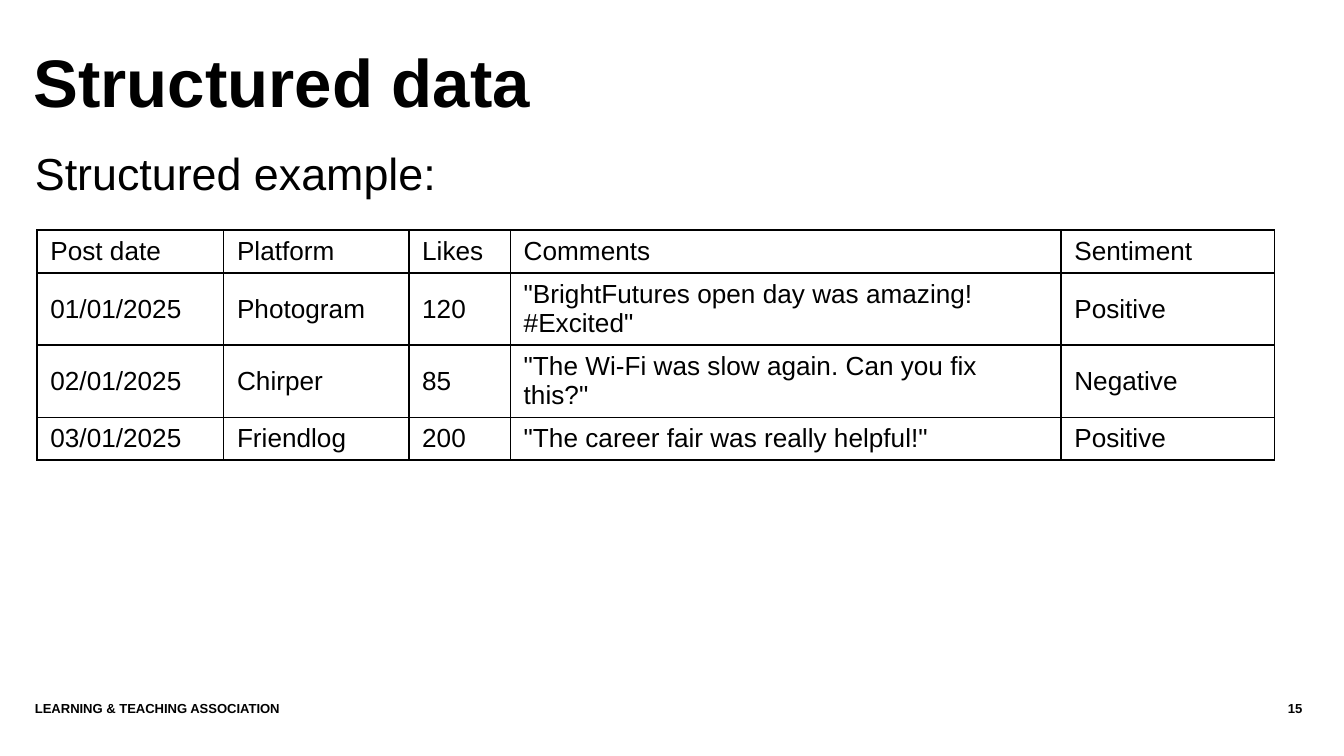
from dataclasses import dataclass

from lxml import etree
from pptx import Presentation
from pptx.dml.color import RGBColor
from pptx.enum import text
from pptx.oxml.ns import qn
from pptx.util import Pt


@dataclass(frozen=True)
class Theme:
    font: str = "Arial"
    ink: str = "000000"
    paper: str = "FFFFFF"
    title_size: float = 36
    body_size: float = 24
    table_size: float = 14
    footer_size: float = 7
    border_width: float = 1


@dataclass(frozen=True)
class Box:
    left: float
    top: float
    width: float
    height: float


@dataclass(frozen=True)
class Label:
    words: str
    box: Box
    size: float
    bold: bool = False
    align: text.PP_ALIGN = text.PP_ALIGN.LEFT
    space_before: float = 0


THEME = Theme()
TITLE_BOX = Box(18, 19.4, 664.6, 54.7)
TABLE_BOX = Box(19.8, 123.2, 663.1, 92)
LABELS = [
    Label("Structured example:", Box(18.7, 77.8, 604.1, 283.7), THEME.body_size,
          space_before=2),
    Label("LEARNING & TEACHING ASSOCIATION", Box(18.7, 375.1, 605.5, 21.6),
          THEME.footer_size, bold=True),
    Label("15", Box(626.4, 375.1, 71.3, 21.6), THEME.footer_size, bold=True,
          align=text.PP_ALIGN.RIGHT),
]
COLUMN_WIDTHS = [100, 99.2, 54.4, 295, 114.5]
POSTS = [
    ("Post date", "Platform", "Likes", "Comments", "Sentiment"),
    ("01/01/2025", "Photogram", "120",
     '"BrightFutures open day was amazing! #Excited"', "Positive"),
    ("02/01/2025", "Chirper", "85",
     '"The Wi-Fi was slow again. Can you fix this?"', "Negative"),
    ("03/01/2025", "Friendlog", "200",
     '"The career fair was really helpful!"', "Positive"),
]


def write_text(frame, words: str, *, size: float, bold: bool = False,
               align: text.PP_ALIGN = text.PP_ALIGN.LEFT,
               line_spacing: float = 1.0, space_before: float = 0) -> None:
    frame.word_wrap = True
    paragraph = frame.paragraphs[0]
    paragraph.alignment = align
    paragraph.line_spacing = line_spacing
    paragraph.space_before = Pt(space_before)
    run = paragraph.add_run()
    run.text = words
    run.font.name = THEME.font
    run.font.size = Pt(size)
    run.font.bold = bold
    run.font.color.rgb = RGBColor.from_string(THEME.ink)


def clear_margins(frame) -> None:
    frame.auto_size = text.MSO_AUTO_SIZE.NONE
    frame.margin_left = frame.margin_right = Pt(0)
    frame.margin_top = frame.margin_bottom = Pt(0)


def add_title(slide, words: str, box: Box) -> None:
    title = slide.shapes.title
    title.left, title.top = Pt(box.left), Pt(box.top)
    title.width, title.height = Pt(box.width), Pt(box.height)
    clear_margins(title.text_frame)
    title.text_frame.vertical_anchor = text.MSO_ANCHOR.MIDDLE
    write_text(title.text_frame, words, size=THEME.title_size, bold=True,
               line_spacing=0.85)


def add_label(slide, label: Label) -> None:
    box = label.box
    shape = slide.shapes.add_textbox(Pt(box.left), Pt(box.top),
                                     Pt(box.width), Pt(box.height))
    clear_margins(shape.text_frame)
    write_text(shape.text_frame, label.words, size=label.size, bold=label.bold,
               align=label.align, space_before=label.space_before)


def add_borders(cell) -> None:
    """Line all four sides; the lines must precede the fill in the cell's XML."""
    properties = cell._tc.get_or_add_tcPr()
    for position, side in enumerate(("lnL", "lnR", "lnT", "lnB")):
        line = etree.Element(qn(f"a:{side}"), w=str(Pt(THEME.border_width)))
        fill = etree.SubElement(line, qn("a:solidFill"))
        etree.SubElement(fill, qn("a:srgbClr"), val=THEME.ink)
        properties.insert(position, line)


def add_posts_table(slide, box: Box) -> None:
    table = slide.shapes.add_table(len(POSTS), len(COLUMN_WIDTHS), Pt(box.left),
                                   Pt(box.top), Pt(box.width), Pt(box.height)).table
    table.first_row = table.horz_banding = False
    for column, width in zip(table.columns, COLUMN_WIDTHS):
        column.width = Pt(width)
    for row, post in zip(table.rows, POSTS):
        for cell, words in zip(row.cells, post):
            cell.vertical_anchor = text.MSO_ANCHOR.MIDDLE
            cell.fill.solid()
            cell.fill.fore_color.rgb = RGBColor.from_string(THEME.paper)
            add_borders(cell)
            write_text(cell.text_frame, words, size=THEME.table_size)


def main() -> None:
    presentation = Presentation()
    presentation.slide_width, presentation.slide_height = Pt(720), Pt(405)
    slide = presentation.slides.add_slide(presentation.slide_layouts[5])
    add_title(slide, "Structured data", TITLE_BOX)
    for label in LABELS:
        add_label(slide, label)
    add_posts_table(slide, TABLE_BOX)
    presentation.save("out.pptx")


if __name__ == "__main__":
    main()
